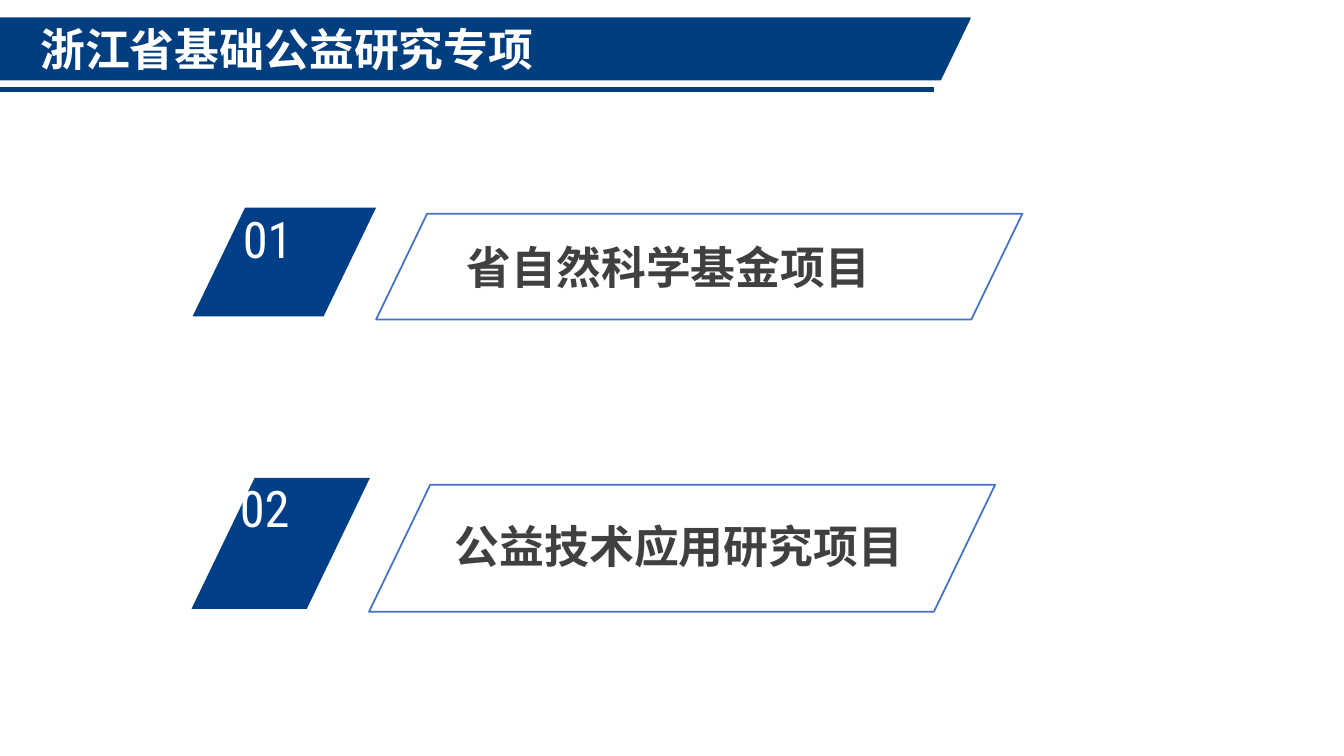
from lxml.etree import SubElement
from pptx import Presentation
from pptx.dml.color import RGBColor
from pptx.enum.shapes import MSO_CONNECTOR, MSO_SHAPE
from pptx.oxml.ns import qn
from pptx.util import Inches, Pt

WHITE = RGBColor(0xFF, 0xFF, 0xFF)
NAVY = RGBColor(0x01, 0x3E, 0x80)
BADGE_BLUE = RGBColor(0x00, 0x3F, 0x88)
OUTLINE_BLUE = RGBColor(0x44, 0x72, 0xC4)
DARK_GREY = RGBColor(0x40, 0x40, 0x40)
CJK_FONT = "Noto Sans CJK SC"
NUMBER_FONT = "Roboto Condensed"

# Each box is left, top, width, height in inches.
ITEMS = [
    dict(number="01", label="省自然科学基金项目",
         badge=(1.91, 2.06, 1.82, 1.08), number_box=(2.31, 2.02, 1.73, 1.17),
         frame=(3.73, 2.12, 6.41, 1.05), label_box=(4.56, 2.34, 5.83, 0.61)),
    dict(number="02", label="公益技术应用研究项目",
         badge=(1.9, 4.74, 1.77, 1.3), number_box=(2.28, 4.68, 1.68, 1.41),
         frame=(3.66, 4.81, 6.21, 1.26), label_box=(4.44, 5.11, 4.77, 0.65)),
]


def add_parallelogram(slide, box, fill=None, line=None):
    sp = slide.shapes.add_shape(MSO_SHAPE.PARALLELOGRAM, *map(Inches, box))
    sp.adjustments[0] = 0.482
    sp.shadow.inherit = False
    if fill is None:
        sp.fill.background()
    else:
        sp.fill.solid()
        sp.fill.fore_color.rgb = fill
    if line is None:
        sp.line.fill.background()
    else:
        sp.line.color.rgb = line
        sp.line.width = Pt(1.25)


def add_text(slide, box, text, size=32, font=CJK_FONT, color=DARK_GREY,
             bold=True, insets=(0.07, 0.04)):
    tf = slide.shapes.add_textbox(*map(Inches, box)).text_frame
    tf.word_wrap = True
    tf.margin_left = tf.margin_right = Inches(insets[0])
    tf.margin_top = tf.margin_bottom = Inches(insets[1])
    r = tf.paragraphs[0].add_run()
    r.text = text
    r.font.size = Pt(size)
    r.font.bold = bold
    r.font.color.rgb = color
    r.font.name = font
    SubElement(r.font._element, qn("a:ea")).set("typeface", font)


def add_rule(slide, x1, x2, y):
    line = slide.shapes.add_connector(
        MSO_CONNECTOR.STRAIGHT, Inches(x1), Inches(y), Inches(x2), Inches(y))
    line.line.color.rgb = NAVY
    line.line.width = Pt(3.5)
    SubElement(line._element.spPr, qn("a:effectLst"))


def add_item(slide, item):
    add_parallelogram(slide, item["badge"], fill=BADGE_BLUE)
    add_text(slide, item["number_box"], item["number"], size=36,
             font=NUMBER_FONT, color=WHITE, bold=False, insets=(0.1, 0.05))
    add_text(slide, item["label_box"], item["label"])
    add_parallelogram(slide, item["frame"], line=OUTLINE_BLUE)


def main():
    prs = Presentation()
    prs.slide_width = Inches(13.33)
    prs.slide_height = Inches(7.5)
    slide = prs.slides.add_slide(prs.slide_layouts[6])
    slide.background.fill.solid()
    slide.background.fill.fore_color.rgb = WHITE

    add_parallelogram(slide, (-0.29, 0.18, 9.91, 0.61), fill=NAVY, line=NAVY)
    add_text(slide, (0.33, 0.18, 8.47, 0.61), "浙江省基础公益研究专项", color=WHITE)
    add_rule(slide, -0.01, 9.26, 0.89)
    for item in ITEMS:
        add_item(slide, item)
    prs.save("out.pptx")


if __name__ == "__main__":
    main()
